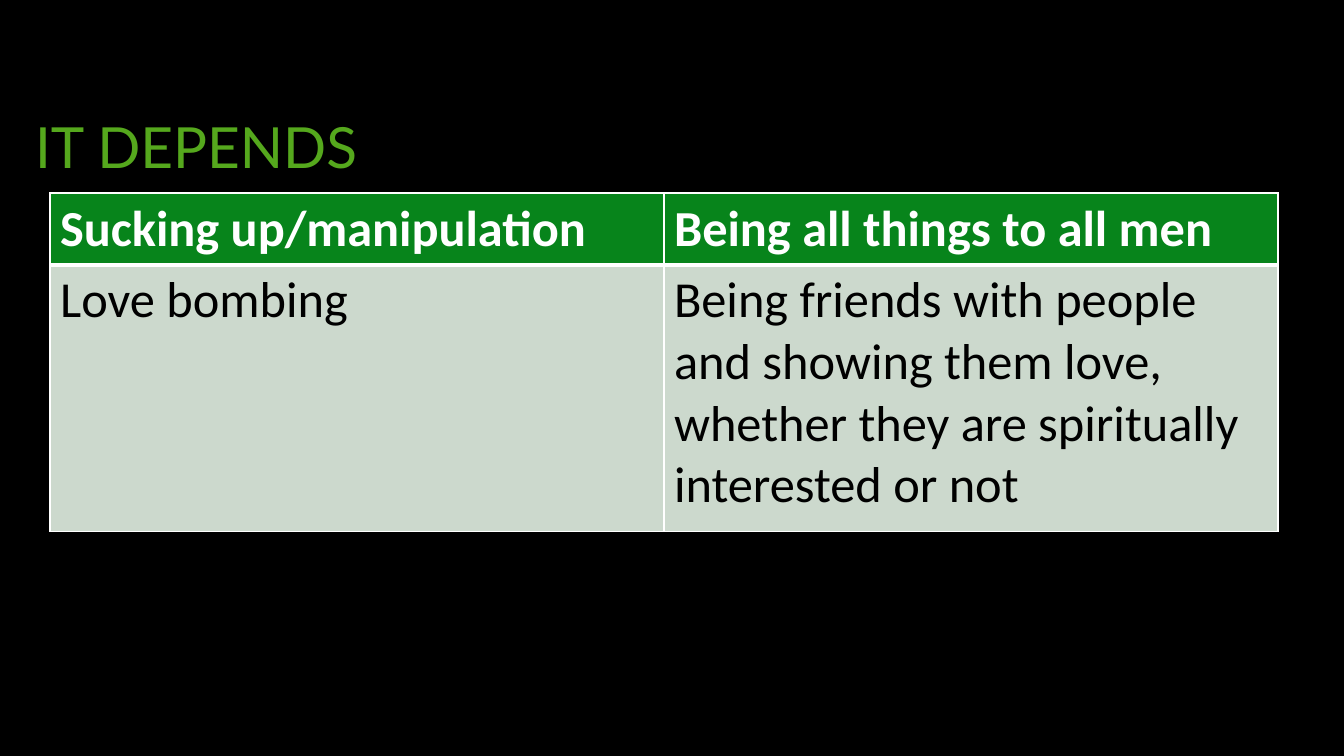
from lxml import etree
from pptx import Presentation
from pptx.dml.color import RGBColor
from pptx.enum.text import MSO_ANCHOR, MSO_AUTO_SIZE, PP_ALIGN
from pptx.oxml.ns import qn
from pptx.util import Emu, Pt

MIDDLE = MSO_ANCHOR.MIDDLE
NO_FIT = MSO_AUTO_SIZE.NONE
LEFT = PP_ALIGN.LEFT

BLACK = RGBColor(0x00, 0x00, 0x00)
WHITE = RGBColor(0xFF, 0xFF, 0xFF)
LIME = RGBColor(0x55, 0xA8, 0x1D)
GREEN = RGBColor(0x07, 0x84, 0x1B)
PALE = RGBColor(0xCC, 0xD9, 0xCD)

TITLE_ONLY = 5
ROWS = [
    ["Sucking up/manipulation", "Being all things to all men"],
    ["Love bombing",
     "Being friends with people and showing them love, "
     "whether they are spiritually interested or not"],
]


def px(n):
    return Emu(round(n * 914400 / 100.8))


class Deck:
    title_font = "Lato"
    body_font = "Calibri"

    def __init__(self, width, height):
        self.prs = Presentation()
        self.prs.slide_width, self.prs.slide_height = px(width), px(height)
        self.s = self.prs.slides.add_slide(self.prs.slide_layouts[TITLE_ONLY])
        fill = self.s.background.fill
        fill.solid()
        fill.fore_color.rgb = BLACK

    def style(self, p, name, size, color, bold=False):
        p.alignment = LEFT
        p.font.name, p.font.size = name, Pt(size)
        p.font.bold, p.font.color.rgb = bold, color

    def title(self, text, x, y, w, h):
        sp = self.s.shapes.title
        sp.left, sp.top, sp.width, sp.height = px(x), px(y), px(w), px(h)
        tf = sp.text_frame
        tf.text = text
        tf.auto_size, tf.vertical_anchor = NO_FIT, MIDDLE
        p = tf.paragraphs[0]
        p.line_spacing = 0.9
        self.style(p, self.title_font, 40.5, LIME)

    def borders(self, cell, widths):
        pr = cell._tc.get_or_add_tcPr()
        for i, (side, width) in enumerate(widths.items()):
            ln = etree.Element(qn(f"a:{side}"), w=str(Pt(width)))
            fill = etree.SubElement(ln, qn("a:solidFill"))
            etree.SubElement(fill, qn("a:srgbClr"), val=str(WHITE))
            pr.insert(i, ln)

    def table(self, rows, x, y, w, heights):
        table = self.s.shapes.add_table(
            len(rows), len(rows[0]), px(x), px(y), px(w), px(sum(heights))).table
        for r, (texts, height) in enumerate(zip(rows, heights)):
            header = r == 0
            table.rows[r].height = px(height)
            for c, text in enumerate(texts):
                cell = table.cell(r, c)
                cell.text = text
                cell.fill.solid()
                cell.fill.fore_color.rgb = GREEN if header else PALE
                self.style(cell.text_frame.paragraphs[0], self.body_font, 36,
                           WHITE if header else BLACK, header)
                self.borders(cell, {"lnL": 1, "lnR": 1,
                                    "lnT": 1 if header else 3,
                                    "lnB": 3 if header else 1})


def main():
    deck = Deck(1344, 756)
    deck.title("IT DEPENDS", 25, 69, 1300, 163)
    deck.table(ROWS, 50, 193, 1228, [71, 267])
    deck.prs.save("out.pptx")


if __name__ == "__main__":
    main()
